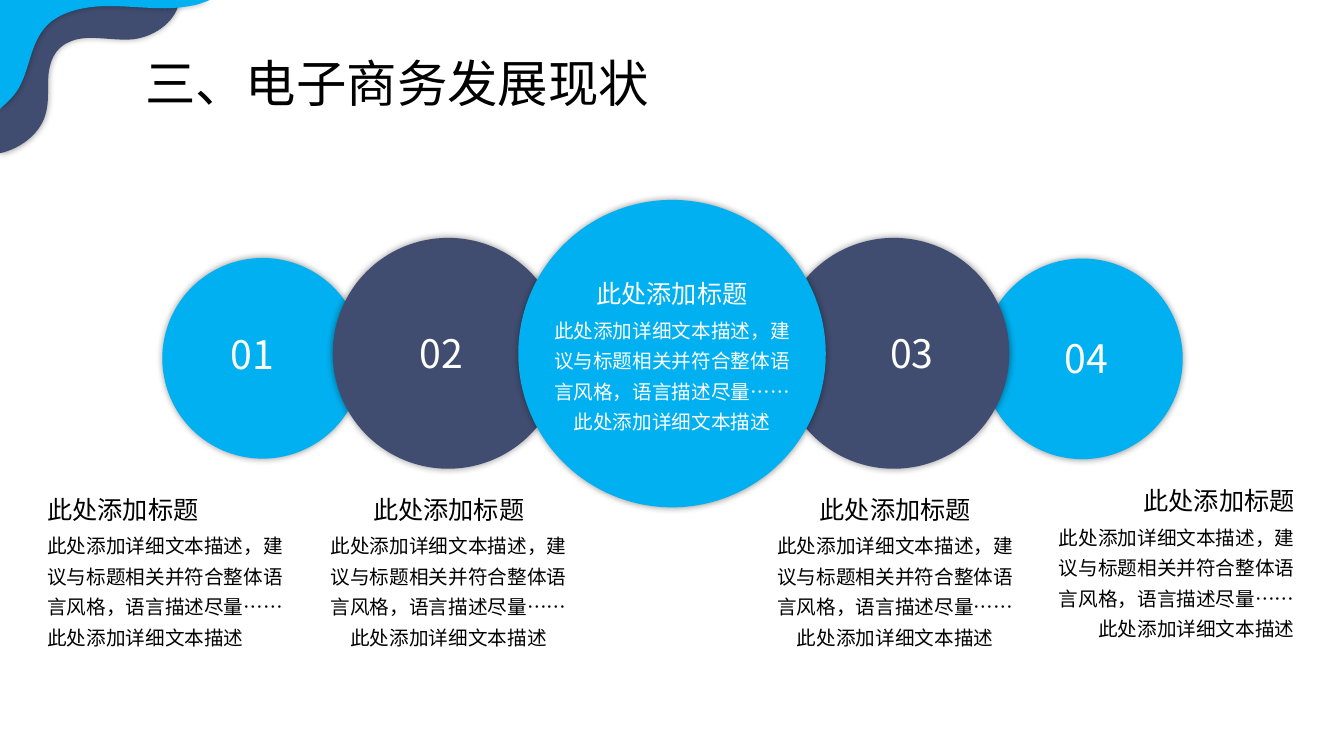
from lxml import etree
from pptx import Presentation
from pptx import util as u
from pptx.dml.color import RGBColor
from pptx.enum import lang, shapes, text
from pptx.oxml import ns

COLORS = {"blue": "00B0F0", "navy": "404D70", "black": "000000", "white": "FFFFFF"}
FONT = "Noto Sans CJK SC"
LEFT, CENTER, RIGHT = text.PP_ALIGN.LEFT, text.PP_ALIGN.CENTER, text.PP_ALIGN.RIGHT
CARD_TITLE = "此处添加标题"
CARD_BODY = "此处添加详细文本描述，建议与标题相关并符合整体语言风格，语言描述尽量……此处添加详细文本描述"

# Outlines in grid cells: two numbers are a straight step, six are a Bézier curve
NAVY_WAVE = [
    (5.3, 0), (17.8, 0),
    (17.6, 1.9, 15.6, 3.6, 13.2, 3.9), (11, 4.1, 8.6, 3.3, 6.8, 4.2),
    (5.4, 4.8, 4.9, 6.2, 4.8, 7.5), (4.7, 8.8, 4.9, 10.1, 4.5, 11.4),
    (4, 13.1, 2.4, 14.5, 0.4, 15.1), (0, 15.2), (0, 8.4), (0.5, 8.1),
    (1.4, 7.5, 2.2, 6.8, 2.7, 6), (3.7, 4.3, 3.9, 2.3, 4.8, 0.7),
]
BLUE_WAVE = [
    (0, 0), (20.8, 0), (20.3, 0.2),
    (19.3, 0.6, 18.2, 0.7, 17.2, 0.8), (15.1, 0.9, 13, 0.6, 10.8, 0.6),
    (8.7, 0.6, 6.5, 1, 5, 2.2), (2.9, 4, 3.1, 6.8, 1.7, 9),
    (1.3, 9.6, 0.8, 10.1, 0.2, 10.6), (0, 10.8),
]
# Centre x, centre y, diameter, colour
CIRCLES = [
    (26.05, 35.55, 19.9, "blue"), (107.35, 35.6, 19.9, "blue"),
    (44.45, 35.05, 22.9, "navy"), (88.65, 35.05, 22.9, "navy"),
    (66.65, 35.08, 30.5, "blue"),
]
NUMBERS = [("01", 21.9, 32.3), ("02", 40.6, 32.2), ("03", 87.3, 32.2), ("04", 104.6, 32.7)]
# Left, top, alignment, text colour
CARDS = [
    (31.8, 48.5, CENTER, "black"), (76.1, 48.5, CENTER, "black"),
    (104, 47.64, RIGHT, "black"), (3.7, 48.5, LEFT, "black"),
    (53.95, 27.12, CENTER, "white"),
]


class SlideBuilder:
    """Places styled elements on a grid of tenth-inch cells."""

    def __init__(self, presentation):
        self.slide = presentation.slides.add_slide(presentation.slide_layouts[6])

    def cells(self, *counts):
        return [u.Inches(count / 10) for count in counts]

    def paint(self, shape, color):
        """Give a shape a plain fill and a soft, centred shadow."""
        shape.fill.solid()
        shape.fill.fore_color.rgb = RGBColor.from_string(COLORS[color])
        shape.line.fill.background()
        shape.shadow.inherit = False
        effects = shape._element.spPr.find(ns.qn("a:effectLst"))
        shadow = etree.SubElement(effects, ns.qn("a:outerShdw"),
                                  blurRad=str(u.Pt(5)), algn="ctr", rotWithShape="0")
        black = etree.SubElement(shadow, ns.qn("a:srgbClr"), val=COLORS["black"])
        etree.SubElement(black, ns.qn("a:alpha"), val="40000")

    def wave(self, outline, color):
        """Draw an outline that touches the slide's top left corner."""
        anchors = [self.cells(*part[-2:]) for part in outline]
        builder = self.slide.shapes.build_freeform(*anchors[0])
        builder.add_line_segments(anchors[1:], close=True)
        shape = builder.convert_to_shape()
        steps = list(shape._element.iter(ns.qn("a:lnTo")))
        for step, part in zip(steps, outline[1:]):
            if len(part) == 6:
                self.bend(step, part)
        self.paint(shape, color)

    def bend(self, step, curve):
        """Replace a straight step of an outline with a Bézier curve."""
        bezier = etree.Element(ns.qn("a:cubicBezTo"))
        for index in (0, 2, 4):
            x, y = self.cells(*curve[index:index + 2])
            etree.SubElement(bezier, ns.qn("a:pt"), x=str(int(x)), y=str(int(y)))
        step.getparent().replace(step, bezier)

    def circle(self, center_x, center_y, diameter, color):
        radius = diameter / 2
        box = self.cells(center_x - radius, center_y - radius, diameter, diameter)
        self.paint(self.slide.shapes.add_shape(shapes.MSO_SHAPE.OVAL, *box), color)

    def label(self, words, box, size, color="black", align=LEFT, spacing=None, wrap=True,
              group=None):
        holder = group or self.slide
        frame = holder.shapes.add_textbox(*self.cells(*box)).text_frame
        frame.word_wrap = wrap
        frame.auto_size = text.MSO_AUTO_SIZE.SHAPE_TO_FIT_TEXT
        frame.text = words
        paragraph = frame.paragraphs[0]
        paragraph.alignment = align
        paragraph.line_spacing = spacing
        run = paragraph.runs[0]
        run.font.size = u.Pt(size)
        run.font.color.rgb = RGBColor.from_string(COLORS[color])
        run.font.name = FONT
        run.font.language_id = lang.MSO_LANGUAGE_ID.SIMPLIFIED_CHINESE
        etree.SubElement(run._r.get_or_add_rPr(), ns.qn("a:ea"), typeface=FONT)

    def card(self, left, top, align, color):
        """Group a description with its title, aligned to the same edge or centre."""
        group = self.slide.shapes.add_group_shape()
        indent = {LEFT: 0, CENTER: 1.5, RIGHT: 3}[align]
        self.label(CARD_BODY, (left, top + 3.3, 25.4, 13), 14, color, align, 1.3, group=group)
        self.label(CARD_TITLE, (left + indent, top, 22.4, 4), 18, color, align, group=group)


def main():
    presentation = Presentation()
    presentation.slide_width = u.Inches(13.33)
    presentation.slide_height = u.Inches(7.5)
    builder = SlideBuilder(presentation)
    builder.wave(NAVY_WAVE, "navy")
    builder.wave(BLUE_WAVE, "blue")
    builder.label("三、电子商务发展现状", (13.4, 3.8, 60.5, 7.6), 36, spacing=1.14)
    for circle in CIRCLES:
        builder.circle(*circle)
    for number, left, top in NUMBERS:
        builder.label(number, (left, top, 6.3, 5.7), 28, "white", CENTER, wrap=False)
    for card in CARDS:
        builder.card(*card)
    presentation.save("out.pptx")


if __name__ == "__main__":
    main()
